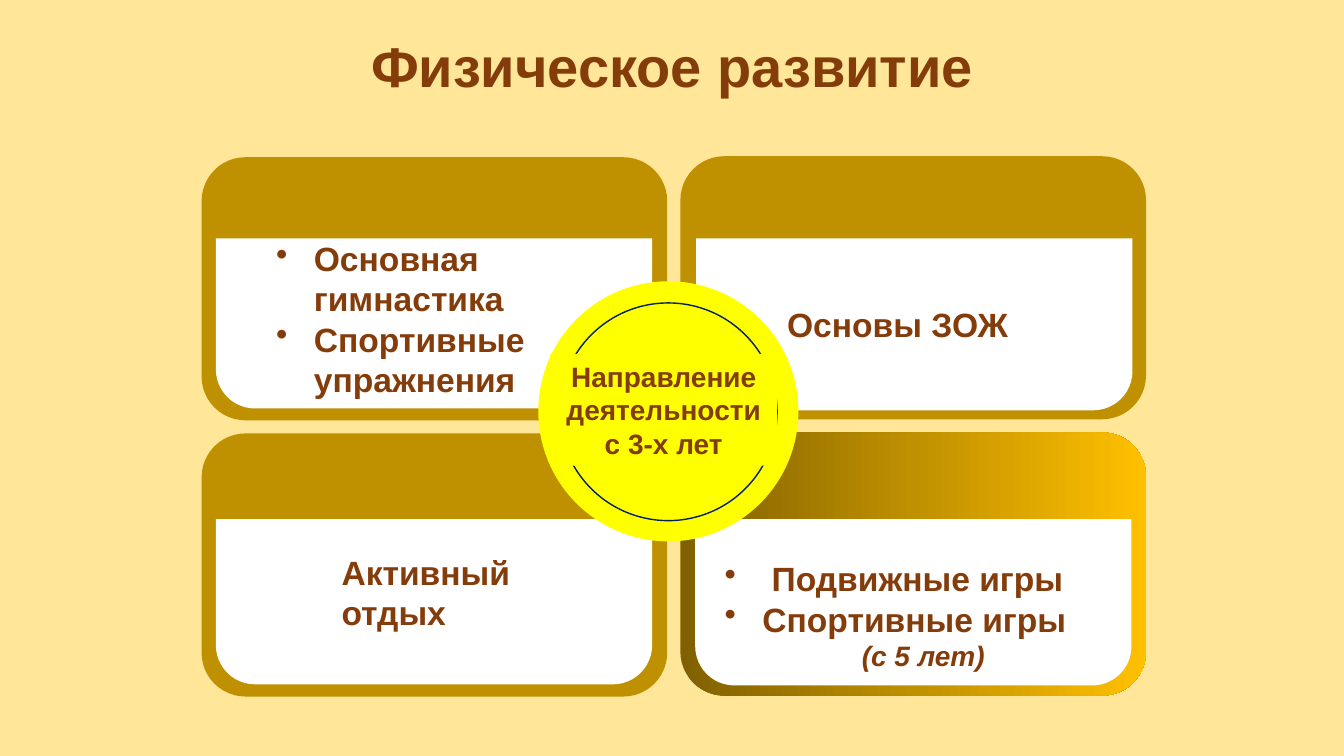
from copy import deepcopy

from pptx import Presentation
from pptx.dml.color import RGBColor
from pptx.enum.shapes import MSO_SHAPE as Preset
from pptx.enum.text import MSO_ANCHOR as Anchor, PP_ALIGN as Align
from pptx.oxml.ns import qn
from pptx.oxml.xmlchemy import OxmlElement
from pptx.util import Pt

COLORS = {
    "background": "FFE699",
    "text": "843C0B",
    "card": "BF9000",
    "card_dark": "806000",
    "card_light": "FFC000",
    "panel": "FFFFFF",
    "circle": "FFFF00",
    "ring": "002060",
}
CARD_SIZE = (332.6, 187.9)
PANEL_WIDTH = 311.6
PANEL_RADIUS = 28
BULLET_INDENT = 27

# Card corner, panel corner and panel height
CARDS = [
    ((144, 112.3), (154.2, 170.3), 121.5),
    ((486, 111.6), (497.3, 170.3), 122.8),
    ((486, 308.9), (496.6, 370.8), 118.8),
    ((144, 309.6), (154.2, 370.8), 118),
]
# Text box, then paragraphs as (text, format)
BULLET = {"bullet": True}
CARD_TEXTS = [
    ((190.1, 165.6, 241.2, 123.8),
     [("Основная гимнастика", BULLET), ("Спортивные упражнения", BULLET)]),
    ((555.1, 213.8, 262.8, 36), [("Основы ЗОЖ", {})]),
    ((236.9, 390.2, 194.4, 65.5), [("Активный отдых", {})]),
    ((510.5, 394.6, 298.1, 90),
     [(" Подвижные игры", BULLET), ("Спортивные игры", BULLET),
      ("(с 5 лет)", {"size": 20, "italic": True, "align": Align.CENTER})]),
]


def color(name):
    return RGBColor.from_string(COLORS[name])


def add_block(slide, preset, box, fill, line=None):
    shape = slide.shapes.add_shape(preset, *map(Pt, box))
    shape.shadow.inherit = False
    shape.fill.solid()
    shape.fill.fore_color.rgb = color(fill)
    if line:
        shape.line.color.rgb = color(line)
        shape.line.width = Pt(1)
    else:
        shape.line.fill.background()
    return shape


def add_panel(slide, corner, height):
    box = (*corner, PANEL_WIDTH, height)
    panel = add_block(slide, Preset.ROUND_2_SAME_RECTANGLE, box, "panel")
    panel.adjustments[0] = 0
    panel.adjustments[1] = PANEL_RADIUS / height


def apply_gradient(shape, names):
    shape.fill.gradient()
    shape.fill.gradient_angle = 0
    stop_list = shape.element.spPr.find(".//" + qn("a:gsLst"))
    while len(stop_list) < len(names):
        stop_list.append(deepcopy(stop_list[-1]))
    for index, (stop, name) in enumerate(zip(shape.fill.gradient_stops, names)):
        stop.position = index / (len(names) - 1)
        stop.color.rgb = color(name)


def add_bullet(paragraph):
    properties = paragraph._p.get_or_add_pPr()
    properties.set("marL", str(Pt(BULLET_INDENT)))
    properties.set("indent", str(-Pt(BULLET_INDENT)))
    bullet = OxmlElement("a:buChar")
    bullet.set("char", "•")
    properties.append(bullet)


def write_text(shape, paragraphs):
    frame = shape.text_frame
    frame.word_wrap = True
    frame.vertical_anchor = Anchor.MIDDLE
    for index, (text, style) in enumerate(paragraphs):
        paragraph = frame.add_paragraph() if index else frame.paragraphs[0]
        paragraph.alignment = style.get("align", Align.LEFT)
        paragraph.line_spacing = style.get("spacing", 1.0)
        if style.get("bullet"):
            add_bullet(paragraph)
        run = paragraph.add_run()
        run.text = text
        font_values = {
            "name": "Arial",
            "bold": True,
            "italic": style.get("italic", False),
            "size": Pt(style.get("size", 24)),
        }
        for attribute, value in font_values.items():
            setattr(run.font, attribute, value)
        run.font.color.rgb = color("text")


def add_text(slide, box, paragraphs):
    write_text(slide.shapes.add_textbox(*map(Pt, box)), paragraphs)


def add_center_circle(slide):
    add_block(slide, Preset.OVAL, (384.5, 200.9, 185.8, 185.8), "circle")
    add_block(slide, Preset.OVAL, (399.6, 216.4, 155.5, 155.5), "circle", "ring")
    add_block(slide, Preset.OVAL, (403.2, 221.8, 148.3, 130.3), "circle")
    label = add_block(slide, Preset.RECTANGLE, (393.1, 252.7, 162, 80), "circle")
    write_text(label, [("Направление деятельности с 3-х лет",
                        {"size": 20, "align": Align.CENTER})])


def main():
    presentation = Presentation()
    presentation.slide_width, presentation.slide_height = Pt(960), Pt(540)
    slide = presentation.slides.add_slide(presentation.slide_layouts[6])
    slide.background.fill.solid()
    slide.background.fill.fore_color.rgb = color("background")

    # Title
    add_text(slide, (48, 21.6, 864, 56.2), [
        ("Физическое развитие",
         {"size": 40, "align": Align.CENTER, "spacing": 0.9})])

    # Cards with white panels
    cards = [add_block(slide, Preset.ROUNDED_RECTANGLE, (*corner, *CARD_SIZE), "card")
             for corner, _, _ in CARDS]
    apply_gradient(cards[2], ["card_dark", "card", "card_light"])
    for _, corner, height in CARDS:
        add_panel(slide, corner, height)
    for box, paragraphs in CARD_TEXTS:
        add_text(slide, box, paragraphs)

    # Central circle
    add_center_circle(slide)
    presentation.save("out.pptx")


if __name__ == "__main__":
    main()
